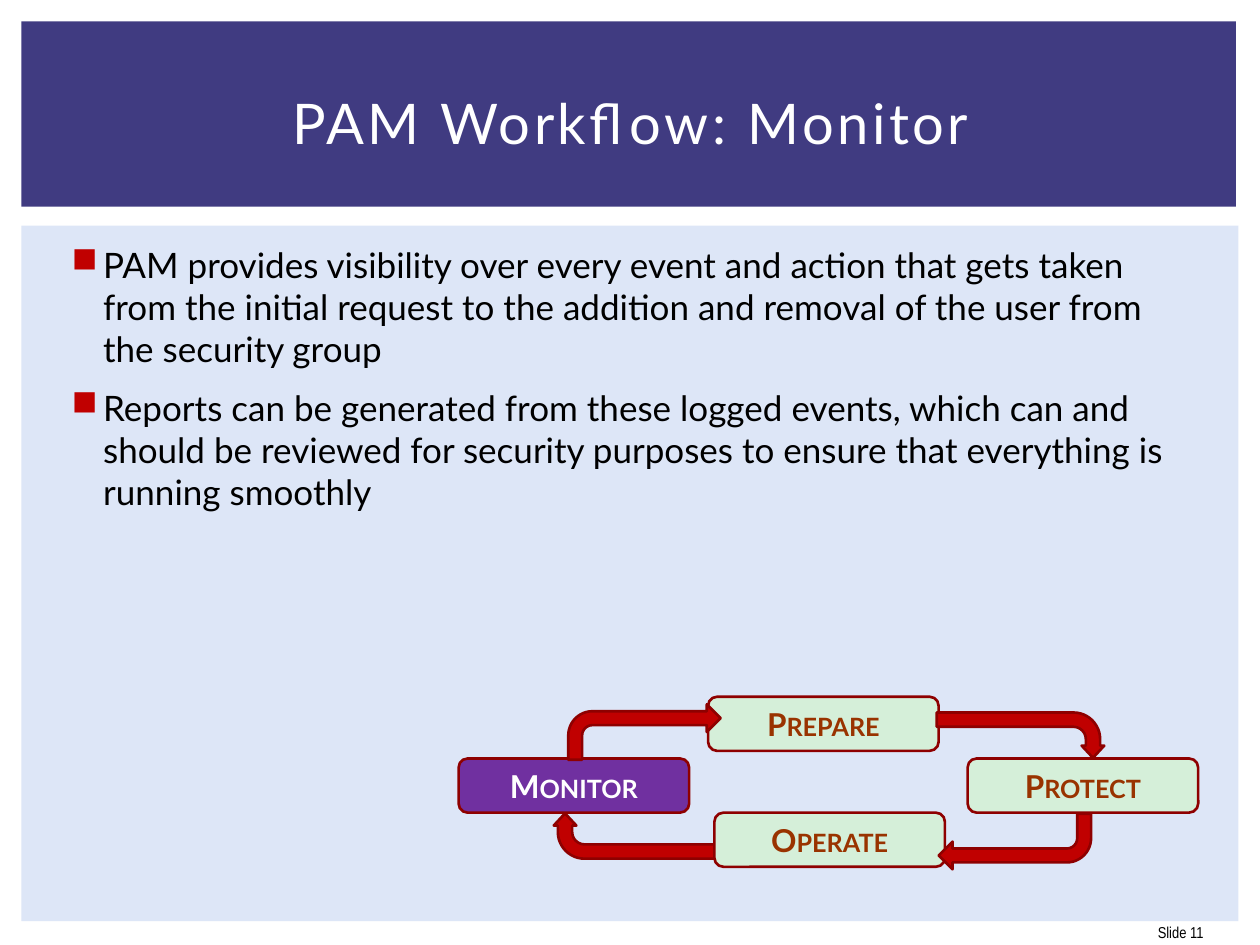
from dataclasses import dataclass

from lxml import etree
from pptx import Presentation
from pptx.dml.color import RGBColor
from pptx.enum.shapes import MSO_SHAPE
from pptx.enum.text import MSO_ANCHOR, PP_ALIGN
from pptx.oxml.ns import qn
from pptx.util import Inches, Pt

RECTANGLE = MSO_SHAPE.RECTANGLE
ROUNDED = MSO_SHAPE.ROUNDED_RECTANGLE
BENT_ARROW = MSO_SHAPE.BENT_ARROW
TOP, MIDDLE = MSO_ANCHOR.TOP, MSO_ANCHOR.MIDDLE
LEFT, CENTER, RIGHT = PP_ALIGN.LEFT, PP_ALIGN.CENTER, PP_ALIGN.RIGHT

WHITE = RGBColor(0xFF, 0xFF, 0xFF)
BLACK = RGBColor(0, 0, 0)
INDIGO = RGBColor(0x40, 0x3B, 0x81)
PALE_BLUE = RGBColor(0xDD, 0xE6, 0xF7)
RED = RGBColor(0xC0, 0, 0)
DARK_RED = RGBColor(0x8E, 0, 0)
PALE_GREEN = RGBColor(0xD5, 0xEF, 0xD9)
BROWN = RGBColor(0x99, 0x33, 0)
PURPLE = RGBColor(0x70, 0x30, 0xA0)

STAGE_SIZE = (1.83, 0.43)
SIDE_BEND = (0.36, 1.33)
LEVEL_BEND = (1.21, 0.44)
SIDE_ADJUSTMENTS = (0.316, 0.25, 0.269, 0.588)


@dataclass(frozen=True)
class Stage:
    name: str
    left: float
    top: float
    fill: RGBColor = PALE_GREEN
    color: RGBColor = BROWN


@dataclass(frozen=True)
class Bend:
    left: float
    top: float
    size: tuple[float, float]
    rotation: int = 0
    flipped: bool = False
    adjustments: tuple[float, ...] = ()


STAGES = (
    Stage("Prepare", 5.62, 5.53),
    Stage("Protect", 7.68, 6.02),
    Stage("Operate", 5.67, 6.45),
    Stage("Monitor", 3.64, 6.02, PURPLE, WHITE),
)
OPERATE_TO_MONITOR = Bend(4.88, 5.97, SIDE_BEND, 270, False, SIDE_ADJUSTMENTS)
FRONT_BENDS = (
    Bend(4.51, 5.59, LEVEL_BEND),
    Bend(7.45, 6.46, LEVEL_BEND, flipped=True),
    Bend(7.92, 5.17, SIDE_BEND, 270, True, SIDE_ADJUSTMENTS),
)
POINTS = (
    "PAM provides visibility over every event and action that gets taken from "
    "the initial request to the addition and removal of the user from the security group",
    "Reports can be generated from these logged events, which can and should be "
    "reviewed for security purposes to ensure that everything is running smoothly",
)


def add_block(slide, kind, left: float, top: float, size: tuple[float, float],
              fill: RGBColor, outlined: bool = True):
    block = slide.shapes.add_shape(kind, Inches(left), Inches(top), *map(Inches, size))
    block.shadow.inherit = False
    block.fill.solid()
    block.fill.fore_color.rgb = fill
    if outlined:
        block.line.color.rgb = DARK_RED
        block.line.width = Pt(1.5)
    else:
        block.line.fill.background()
    return block


def style(paragraph, size: int, color: RGBColor, align=LEFT, name: str = "Lato"):
    paragraph.alignment = align
    font = paragraph.font
    font.name, font.size, font.color.rgb = name, Pt(size), color
    return font


def add_text(slide, left: float, top: float, size: tuple[float, float], anchor):
    frame = slide.shapes.add_textbox(Inches(left), Inches(top), *map(Inches, size)).text_frame
    frame.word_wrap = True
    frame.vertical_anchor = anchor
    return frame


def add_bullet(paragraph) -> None:
    properties = paragraph._p.get_or_add_pPr()
    properties.set("marL", str(Inches(0.3)))
    properties.set("indent", str(Inches(-0.25)))
    color = etree.SubElement(properties, qn("a:buClr"))
    etree.SubElement(color, qn("a:srgbClr"), val=str(RED))
    etree.SubElement(properties, qn("a:buChar"), char="■")


def add_stage(slide, stage: Stage) -> None:
    frame = add_block(slide, ROUNDED, stage.left, stage.top, STAGE_SIZE, stage.fill).text_frame
    frame.vertical_anchor = MIDDLE
    label = frame.paragraphs[0]
    label.text = stage.name
    label.space_after = Pt(6)
    font = style(label, 18, stage.color, CENTER)
    font.bold = True
    font._element.set("cap", "small")


def add_bend(slide, bend: Bend) -> None:
    arrow = add_block(slide, BENT_ARROW, bend.left, bend.top, bend.size, RED)
    arrow.rotation = bend.rotation
    for index, value in enumerate(bend.adjustments):
        arrow.adjustments[index] = value
    if bend.flipped:
        transform = arrow._element.spPr.find(qn("a:xfrm"))
        transform.set("flipH", "1")
        transform.set("flipV", "1")


def main() -> None:
    deck = Presentation()
    deck.slide_width, deck.slide_height = Inches(10), Inches(7.5)
    slide = deck.slides.add_slide(deck.slide_layouts[6])

    add_block(slide, RECTANGLE, 0.17, 1.79, (9.66, 5.52), PALE_BLUE, outlined=False)
    add_block(slide, RECTANGLE, 0.17, 0.17, (9.64, 1.47), INDIGO, outlined=False)

    page_number = add_text(slide, 9.01, 7.25, (0.64, 0.3), MIDDLE).paragraphs[0]
    page_number.text = "Slide 11"
    style(page_number, 9, BLACK, RIGHT, "Arial Narrow")

    body = add_text(slide, 0.42, 1.88, (9.19, 4.82), TOP)
    body.text = "\n".join(POINTS)
    for point in body.paragraphs:
        point.space_before, point.space_after = Pt(4), Pt(6)
        add_bullet(point)
        style(point, 20, BLACK)

    title = add_text(slide, 0.42, 0.39, (9.17, 1.15), MIDDLE).paragraphs[0]
    title.text = "PAM Workflow: Monitor"
    style(title, 32, WHITE, CENTER)._element.set("spc", "200")

    add_bend(slide, OPERATE_TO_MONITOR)
    for stage in STAGES:
        add_stage(slide, stage)
    for bend in FRONT_BENDS:
        add_bend(slide, bend)

    deck.save("out.pptx")


if __name__ == "__main__":
    main()
